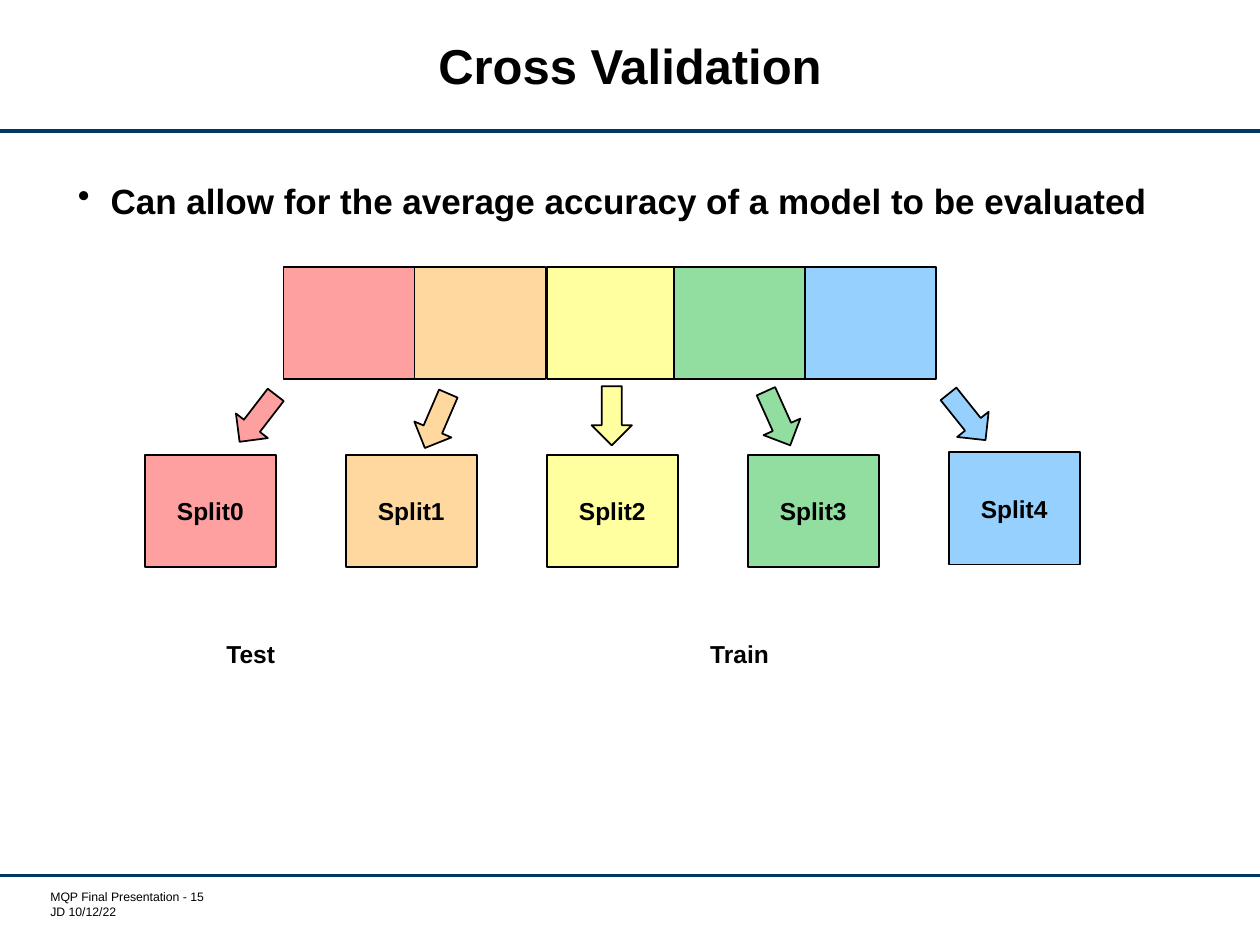
from lxml.etree import SubElement
from pptx import Presentation
from pptx.dml.color import RGBColor
from pptx.enum.shapes import MSO_CONNECTOR as Connector, MSO_SHAPE as Shape
from pptx.enum.text import MSO_ANCHOR as Anchor, PP_ALIGN as Align
from pptx.oxml.ns import qn
from pptx.util import Inches, Pt

BLACK = RGBColor(0x00, 0x00, 0x00)
NAVY = RGBColor(0x00, 0x37, 0x67)
PINK = RGBColor(0xFF, 0xA0, 0xA0)
ORANGE = RGBColor(0xFF, 0xD8, 0xA0)
YELLOW = RGBColor(0xFF, 0xFF, 0xA0)
GREEN = RGBColor(0x91, 0xDE, 0xA0)
BLUE = RGBColor(0x96, 0xD0, 0xFF)

COLUMNS, ROWS = 100, 75
BLOCK = (10.4, 8.9)
ARROW = (4.7, 3.2)
SPLIT_LEFT, SPLIT_STEP = 11.5, 15.95


class SlideBuilder:
    font_name = "Arial"

    def __init__(self, deck):
        self.column = deck.slide_width / COLUMNS
        self.row = deck.slide_height / ROWS
        self.page = deck.slides.add_slide(deck.slide_layouts[6])

    def place(self, left, top, width, height):
        return (round(left * self.column), round(top * self.row),
                round(width * self.column), round(height * self.row))

    def fill_text(self, frame, text, size, bold=True, align=Align.CENTER):
        frame.word_wrap = True
        frame.text = text
        for para in frame.paragraphs:
            para.alignment = align
            for span in para.runs:
                span.font.name = self.font_name
                span.font.size = Pt(size)
                span.font.bold = bold
                span.font.color.rgb = BLACK

    def text(self, area, text, size, **style):
        box = self.page.shapes.add_textbox(*self.place(*area))
        self.fill_text(box.text_frame, text, size, **style)
        return box.text_frame

    def bullet(self, area, text, size):
        para = self.text(area, text, size, align=Align.LEFT).paragraphs[0]
        para.line_spacing = 0.9
        properties = para._p.get_or_add_pPr()
        indent = Inches(0.26)
        properties.set("marL", str(indent))
        properties.set("indent", str(-indent))
        SubElement(properties, qn("a:buChar")).set("char", "•")

    def rule(self, row):
        left, top, width, _ = self.place(0, row, COLUMNS, 0)
        line = self.page.shapes.add_connector(
            Connector.STRAIGHT, left, top, left + width, top)
        line.line.color.rgb = NAVY
        line.line.width = Pt(1.75)
        SubElement(line._element.spPr, qn("a:effectLst"))

    def shape(self, kind, area, color, text="", rotation=0):
        shape = self.page.shapes.add_shape(kind, *self.place(*area))
        shape.shadow.inherit = False
        shape.rotation = rotation
        shape.fill.solid()
        shape.fill.fore_color.rgb = color
        shape.line.color.rgb = BLACK
        shape.line.width = Pt(1)
        if text:
            shape.text_frame.vertical_anchor = Anchor.MIDDLE
            self.fill_text(shape.text_frame, text, 14)


def main():
    deck = Presentation()
    deck.slide_width, deck.slide_height = Inches(10), Inches(7.5)
    slide = SlideBuilder(deck)

    for row in (10.4, 69.5):
        slide.rule(row)

    title = slide.text((10.3, 1.1, 79.4, 8.9), "Cross Validation", 28)
    title.vertical_anchor = Anchor.MIDDLE
    title.paragraphs[0].line_spacing = Pt(28)

    slide.bullet((5.2, 14.1, 89.6, 52.8),
                 "Can allow for the average accuracy of a model to be evaluated", 20)

    folds = [
        (PINK, 22.5, 36.1, (18.1, 31.6), 127.6),
        (ORANGE, 32.9, 36.1, (32.3, 31.8), 113.3),
        (YELLOW, 43.4, 36.1, (46.2, 31.4), 90),
        (GREEN, 53.5, 36.1, (59.4, 31.6), 65.8),
        (BLUE, 63.9, 35.9, (74.4, 31.5), 51.3),
    ]
    for index, (color, left, split_top, arrow, angle) in enumerate(folds):
        split_left = SPLIT_LEFT + index * SPLIT_STEP
        slide.shape(Shape.RECTANGLE, (left, 21.2, *BLOCK), color)
        slide.shape(Shape.RECTANGLE, (split_left, split_top, *BLOCK), color,
                    text=f"Split{index}")
        slide.shape(Shape.RIGHT_ARROW, (*arrow, *ARROW), color, rotation=angle)

    for label, left in (("Test", 13.4), ("Train", 52.2)):
        slide.text((left, 50.2, 13, 3.5), label, 14)

    footer = slide.text((3.5, 70.6, 13.9, 2.4),
                        "MQP Final Presentation - 15\nJD 10/12/22", 7,
                        bold=False, align=Align.LEFT)
    footer.margin_left = Inches(0.05)
    footer.margin_top = footer.margin_right = footer.margin_bottom = 0

    deck.save("out.pptx")


if __name__ == "__main__":
    main()
